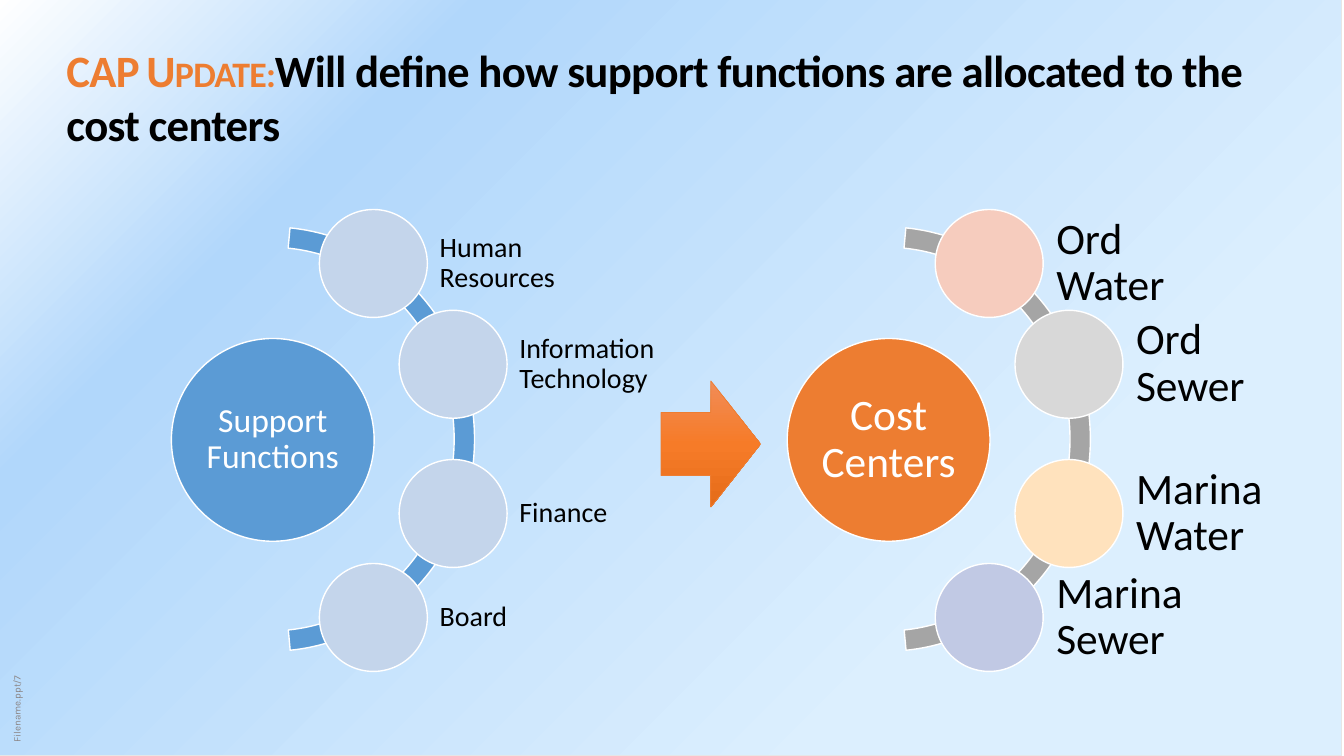
from lxml.etree import SubElement
from pptx import Presentation
from pptx.dml.color import RGBColor
from pptx.enum.shapes import MSO_SHAPE
from pptx.enum.text import MSO_ANCHOR, MSO_AUTO_SIZE, PP_ALIGN
from pptx.oxml import parse_xml
from pptx.oxml.ns import nsdecls, qn
from pptx.util import Cm, Pt

HUES = {
    "white": "FFFFFF", "black": "000000", "edge": "E7E6E6", "note": "8B8585",
    "blue": "5B9BD5", "pale": "C4D5EB", "orange": "ED7D31", "gray": "A5A5A5",
    "pink": "F6CCBE", "silver": "D8D8D8", "cream": "FFE2BD", "lilac": "C1C9E4",
}
SKY = [(25, "DCEFFE"), (77, "B1D7FB"), (100, "FFFFFF")]
FLAME = [(0, "F18C57"), (50, "F67B28"), (100, "E56C19")]
RADIAL = '<a:path path="circle"><a:fillToRect l="100000" t="100000"/></a:path>'
DOWN = '<a:lin ang="5400000" scaled="0"/>'


def draw(shapes, kind, box, fill, line="white", width=1, grade=None):
    """Add a preset shape; grade is a pair of gradient stops and direction XML."""
    shape = shapes.add_shape(kind, *[Cm(v) for v in box])
    shape.shadow.inherit = False
    shape.fill.solid()
    shape.fill.fore_color.rgb = RGBColor.from_string(HUES[fill])
    shape.line.color.rgb = RGBColor.from_string(HUES[line])
    shape.line.width = Pt(width)
    if grade:
        stops, way = grade
        marks = "".join(f'<a:gs pos="{at * 1000}"><a:srgbClr val="{hue}"/></a:gs>'
                        for at, hue in stops)
        solid = shape._element.spPr.find(qn("a:solidFill"))
        solid.getparent().replace(solid, parse_xml(
            f'<a:gradFill {nsdecls("a")} rotWithShape="1">'
            f'<a:gsLst>{marks}</a:gsLst>{way}</a:gradFill>'))
    return shape


def write(shape, text, size, hue, inset, anchor=MSO_ANCHOR.MIDDLE,
          align=PP_ALIGN.LEFT, space=0.9, face="Calibri"):
    frame = shape.text_frame
    frame.word_wrap = True
    frame.vertical_anchor = anchor
    frame.margin_left = frame.margin_right = Cm(inset)
    frame.margin_top = frame.margin_bottom = Cm(inset)
    para = frame.paragraphs[0]
    para.text = text
    para.alignment = align
    para.line_spacing = space
    para.font.size = Pt(size)
    para.font.name = face
    para.font.color.rgb = RGBColor.from_string(HUES[hue])


deck = Presentation()
deck.slide_width, deck.slide_height = Cm(33.87), Cm(19.05)
slide = deck.slides.add_slide(deck.slide_layouts[5])
shapes = slide.shapes

# Backdrop, behind the title
sky = draw(shapes, MSO_SHAPE.RECTANGLE, (-0.05, 0, 33.87, 19.05), "white",
           "edge", 0.75, (SKY, RADIAL))
shapes._spTree.insert(2, sky._element)

# File name up the left edge
note = shapes.add_textbox(Cm(-2.97), Cm(15.16), Cm(6.78), Cm(0.56))
note.rotation = 270
write(note, "Filename.ppt/7", 7, "note", 0.13, MSO_ANCHOR.BOTTOM,
      space=1, face="Karla")
note.text_frame.auto_size = MSO_AUTO_SIZE.SHAPE_TO_FIT_TEXT

# Title
title = shapes.title
title.left, title.top, title.width, title.height = Cm(1.42), Cm(0.84), Cm(31.04), Cm(3.18)
title.text_frame.vertical_anchor = MSO_ANCHOR.MIDDLE
head = title.text_frame.paragraphs[0]
head.alignment = PP_ALIGN.LEFT
head.font.size = Pt(32)
head.font.name = "Calibri"
head.font.bold = True
for text, hue, caps in [
    ("CAP Update: ", "orange", "small"),
    ("Will define how support functions are allocated to the cost centers", "black", "none"),
]:
    run = head.add_run()
    run.text = text
    run.font.color.rgb = RGBColor.from_string(HUES[hue])
    props = run._r.get_or_add_rPr()
    props.set("spc", "-50")
    props.set("cap", caps)

# Two radial clusters: hub, arc, then four labelled nodes
SPOTS = [(8.05, 5.28), (10.06, 7.82), (10.06, 11.58), (8.05, 14.2)]
CLUSTERS = [
    (0, "Support Functions", "blue", "blue", 24, 20, 0.08,
     [("Human Resources", "pale"), ("Information Technology", "pale"),
      ("Finance", "pale"), ("Board", "pale")]),
    (15.52, "Cost Centers", "orange", "gray", 31, 31, 0.1,
     [("Ord Water", "pink"), ("Ord Sewer", "silver"),
      ("Marina Water", "cream"), ("Marina Sewer", "lilac")]),
]
for shift, name, fill, band, big, small, inset, nodes in CLUSTERS:
    group = shapes.add_group_shape().shapes
    hub = draw(group, MSO_SHAPE.OVAL, (4.32 + shift, 8.53, 5.11, 5.11), fill)
    write(hub, name, big, "white", inset, align=PP_ALIGN.CENTER)
    arc = draw(group, MSO_SHAPE.BLOCK_ARC, (1.7 + shift, 5.72, 10.26, 10.69), band)
    for i, value in enumerate((165.09, 50.88, 0.05)):
        arc.adjustments[i] = value
    for (x, y), (label, tint) in zip(SPOTS, nodes):
        draw(group, MSO_SHAPE.OVAL, (x + shift, y, 2.72, 2.72), tint)
        box = group.add_textbox(Cm(x + shift + 2.95), Cm(y + 0.04), Cm(3.66), Cm(2.64))
        write(box, label, small, "black", inset)

# Arrow between the clusters
draw(shapes, MSO_SHAPE.RIGHT_ARROW, (16.66, 9.6, 2.51, 3.18), "orange",
     "orange", 0.5, (FLAME, DOWN))

deck.save("out.pptx")
